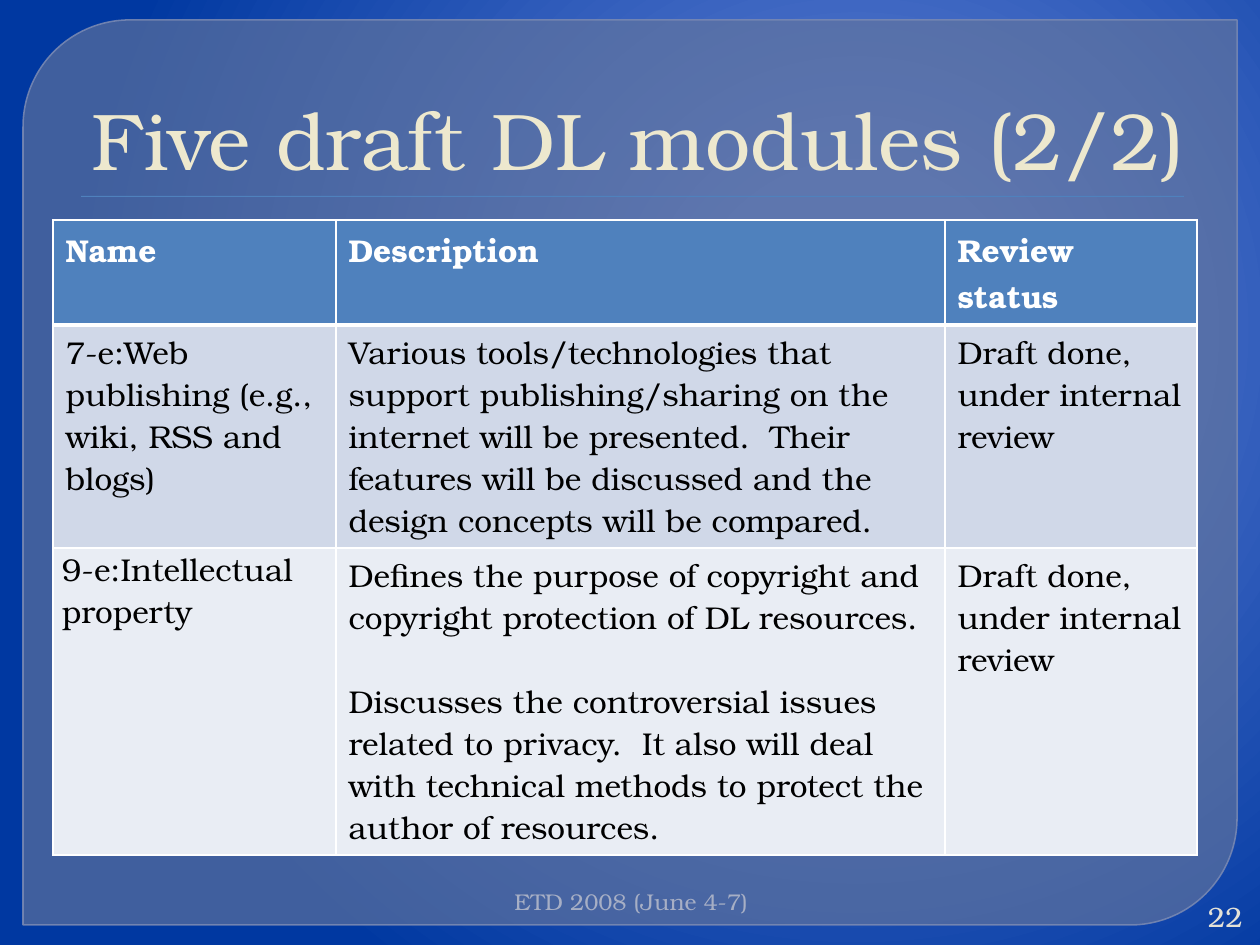
from lxml import etree
from pptx import Presentation
from pptx.dml.color import RGBColor
from pptx.enum.shapes import MSO_SHAPE
from pptx.enum.text import MSO_ANCHOR, PP_ALIGN
from pptx.oxml import parse_xml
from pptx.oxml.ns import qn
from pptx.util import Emu, Pt

TOP, MIDDLE, BOTTOM = MSO_ANCHOR.TOP, MSO_ANCHOR.MIDDLE, MSO_ANCHOR.BOTTOM
LEFT, RIGHT = PP_ALIGN.LEFT, PP_ALIGN.RIGHT
PANEL_SHAPE, BAR_SHAPE = MSO_SHAPE.ROUND_2_DIAG_RECTANGLE, MSO_SHAPE.RECTANGLE

PX_PER_INCH = 126
FONT = "TeX Gyre Bonum"
DRAWING_NS = "http://schemas.openxmlformats.org/drawingml/2006/main"

WHITE = RGBColor(0xFF, 0xFF, 0xFF)
BLACK = RGBColor(0x00, 0x00, 0x00)
CREAM = RGBColor(0xED, 0xE8, 0xCE)
FOOTER_GREY = RGBColor(0xA7, 0xAF, 0xC5)
NUMBER_GREY = RGBColor(0xE3, 0xE1, 0xD7)
PANEL_FILL = RGBColor(0x63, 0x75, 0x9D)
PANEL_LINE = RGBColor(0x79, 0x89, 0xB3)
ACCENT = RGBColor(0x4F, 0x81, 0xBD)
BAND_DARK = RGBColor(0xD0, 0xD8, 0xE8)
BAND_LIGHT = RGBColor(0xE9, 0xED, 0xF4)
GLOW_STOPS = [
    (0, RGBColor(0x61, 0x82, 0xD6)),
    (20, RGBColor(0x55, 0x78, 0xCE)),
    (100, RGBColor(0x00, 0x38, 0xA1)),
]

COLUMN_WIDTHS = [283, 609, 252]
ROW_HEIGHTS = [105, 223, 307]
ROW_FILLS = [ACCENT, BAND_DARK, BAND_LIGHT]
REVIEW_STATUS = "Draft done, under internal review"
# Each cell is a list of paragraphs
MODULES = [
    [["Name"], ["Description"], ["Review status"]],
    [
        ["7-e:Web publishing (e.g., wiki, RSS and blogs)"],
        ["Various tools/technologies that support publishing/sharing on the internet "
         "will be presented.  Their features will be discussed and the design concepts "
         "will be compared."],
        [REVIEW_STATUS],
    ],
    [
        ["9-e:Intellectual property"],
        ["Defines the purpose of copyright and copyright protection of DL resources.",
         "Discusses the controversial issues related to privacy.  It also will deal with "
         "technical methods to protect the author of resources."],
        [REVIEW_STATUS],
    ],
]


def px(length):
    return Emu(round(length * 914400 / PX_PER_INCH))


def box_emu(box):
    return [px(length) for length in box]


def set_opacity(fill, percent):
    color = fill._xPr.find(".//" + qn("a:srgbClr"))
    etree.SubElement(color, qn("a:alpha"), val=str(percent * 1000))


def add_run(paragraph, text, size, color, bold=False):
    run = paragraph.add_run()
    run.text = text
    run.font.name = FONT
    run.font.size = Pt(size)
    run.font.bold = bold
    run.font.color.rgb = color


def add_label(slide, box, text, size, color, anchor):
    frame = slide.shapes.add_textbox(*box_emu(box)).text_frame
    frame.word_wrap = True
    frame.vertical_anchor = anchor
    paragraph = frame.paragraphs[0]
    paragraph.alignment = RIGHT
    add_run(paragraph, text, size, color)


def paint_background(slide):
    slide.background.fill.solid()
    solid = slide.element.find(".//" + qn("p:bgPr")).find(qn("a:solidFill"))
    stops = "".join(
        f'<a:gs pos="{position * 1000}"><a:srgbClr val="{color}"/></a:gs>'
        for position, color in GLOW_STOPS
    )
    gradient = parse_xml(
        f'<a:gradFill xmlns:a="{DRAWING_NS}" rotWithShape="1"><a:gsLst>{stops}</a:gsLst>'
        '<a:path path="circle"><a:fillToRect l="68000" t="35000" r="32000" b="65000"/>'
        "</a:path></a:gradFill>"
    )
    solid.getparent().replace(solid, gradient)


def add_panel(slide, box):
    panel = slide.shapes.add_shape(PANEL_SHAPE, *box_emu(box))
    panel.shadow.inherit = False
    panel.adjustments[0] = 0.118
    panel.adjustments[1] = 0
    panel.fill.solid()
    panel.fill.fore_color.rgb = PANEL_FILL
    set_opacity(panel.fill, 65)
    panel.line.width = Pt(0.87)
    panel.line.color.rgb = PANEL_LINE
    set_opacity(panel.line.fill, 88)


def add_heading(slide, box):
    left, top, width, height = box
    # Thin rule under the title, with a soft shadow
    rule = slide.shapes.add_shape(
        BAR_SHAPE, *box_emu((left + 18, top + height + 3, width - 31, 1)))
    rule.fill.solid()
    rule.fill.fore_color.rgb = ACCENT
    rule.line.fill.background()
    rule.shadow.inherit = False
    effects = rule._element.spPr.find(qn("a:effectLst"))
    effects.append(parse_xml(
        f'<a:outerShdw xmlns:a="{DRAWING_NS}" blurRad="12700" dist="12700" dir="5400000">'
        '<a:srgbClr val="000000"><a:alpha val="75000"/></a:srgbClr></a:outerShdw>'
    ))
    add_label(slide, box, "Five draft DL modules (2/2)", 46, CREAM, BOTTOM)


def set_borders(cell, top_width, bottom_width):
    properties = cell._tc.get_or_add_tcPr()
    widths = {"lnL": 1, "lnR": 1, "lnT": top_width, "lnB": bottom_width}
    for index, (side, width) in enumerate(widths.items()):
        properties.insert(index, parse_xml(
            f'<a:{side} xmlns:a="{DRAWING_NS}" w="{Pt(width)}"><a:solidFill>'
            f'<a:srgbClr val="{WHITE}"/></a:solidFill></a:{side}>'
        ))


def fill_cell(cell, texts, is_header):
    frame = cell.text_frame
    for index, text in enumerate(texts):
        paragraph = frame.add_paragraph() if index else frame.paragraphs[0]
        paragraph.alignment = LEFT
        if index:
            paragraph.space_before = Pt(24)
        add_run(paragraph, text, 18, WHITE if is_header else BLACK, is_header)


def add_module_table(slide, left, top):
    box = (left, top, sum(COLUMN_WIDTHS), sum(ROW_HEIGHTS))
    table = slide.shapes.add_table(
        len(ROW_HEIGHTS), len(COLUMN_WIDTHS), *box_emu(box)).table
    for column, width in zip(table.columns, COLUMN_WIDTHS):
        column.width = px(width)
    for row_index, (row, height) in enumerate(zip(table.rows, ROW_HEIGHTS)):
        row.height = px(height)
        for cell, texts in zip(row.cells, MODULES[row_index]):
            cell.fill.solid()
            cell.fill.fore_color.rgb = ROW_FILLS[row_index]
            set_borders(cell, 3 if row_index == 1 else 1, 3 if row_index == 0 else 1)
            fill_cell(cell, texts, row_index == 0)

    # The last module name sits tighter in its cell
    tight = table.cell(2, 0)
    tight.margin_left = tight.margin_right = px(9)
    tight.margin_top = tight.margin_bottom = 0
    paragraph = tight.text_frame.paragraphs[0]
    paragraph.space_before = paragraph.space_after = Pt(3)


def add_footer(slide):
    add_label(slide, (179, 882, 581, 38), "ETD 2008 (June 4-7)", 13, FOOTER_GREY, TOP)
    add_label(slide, (1191, 897, 64, 38), "22", 16, NUMBER_GREY, MIDDLE)


def main():
    presentation = Presentation()
    presentation.slide_width, presentation.slide_height = px(1260), px(945)
    slide = presentation.slides.add_slide(presentation.slide_layouts[6])
    paint_background(slide)
    add_panel(slide, (23, 20, 1214, 905))
    add_heading(slide, (63, 35, 1134, 158))
    add_module_table(slide, 53, 220)
    add_footer(slide)
    presentation.save("out.pptx")


if __name__ == "__main__":
    main()
